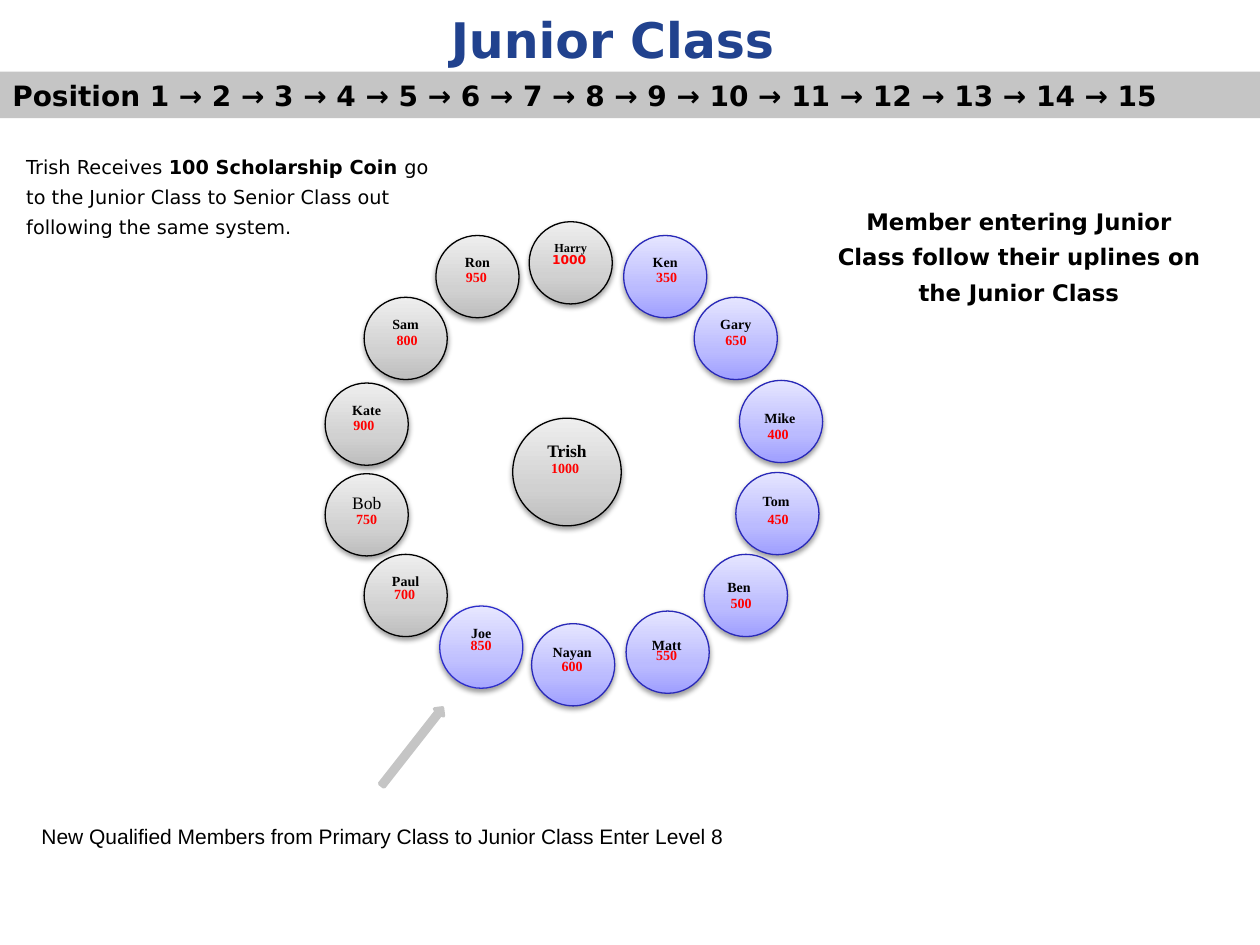
"""Build the Junior Class slide: a ring of members with their coin scores."""
from copy import deepcopy

from lxml.etree import SubElement
from pptx import Presentation
from pptx.dml.color import RGBColor
from pptx.enum.shapes import MSO_SHAPE
from pptx.enum.text import MSO_ANCHOR, PP_ALIGN
from pptx.oxml.ns import qn
from pptx.util import Pt

BLACK = RGBColor(0x00, 0x00, 0x00)
RED = RGBColor(0xFF, 0x00, 0x00)
NAVY = RGBColor(0x21, 0x42, 0x8E)
SILVER = RGBColor(0xC5, 0xC5, 0xC5)
GREY_STOPS = [RGBColor(0xBD, 0xBD, 0xBD), RGBColor(0xD1, 0xD1, 0xD1), RGBColor(0xEE, 0xEE, 0xEE)]
BLUE_STOPS = [RGBColor(0x9F, 0x9F, 0xFF), RGBColor(0xBB, 0xBB, 0xFF), RGBColor(0xE5, 0xE5, 0xFF)]
JOE_STOPS = [RGBColor(0xA7, 0xA7, 0xFF), RGBColor(0xC1, 0xC1, 0xFF), RGBColor(0xE7, 0xE7, 0xFF)]
GREY = (GREY_STOPS, BLACK)
BLUE = (BLUE_STOPS, RGBColor(0x29, 0x29, 0xB8))
JOE_BLUE = (JOE_STOPS, RGBColor(0x2E, 0x2E, 0xCB))
STOP_POSITIONS = (0, 0.35, 1)

SANS, SERIF = "DejaVu Sans", "Times New Roman"
CIRCLE_SIZE = (47.5, 47)
LEADER_SIZE = (62, 61.5)
LABEL_SIZE = (42, 17.25)

TITLE = "Junior Class"
POSITIONS = "Position " + " → ".join(str(number) for number in range(1, 16))
COIN_RUNS = [
    ("Trish Receives ", False),
    ("100 Scholarship Coin ", True),
    ("go to the Junior Class to Senior Class out following the same system.", False),
]
UPLINES = "Member entering Junior Class follow their uplines on the Junior Class"
ENTRY = "New Qualified Members from Primary Class to Junior Class Enter Level 8"

# name, circle corner, palette, score, score corner, name format
MEMBERS = [
    ("Harry", (302.4, 126.7), GREY, "1000", (304.2, 140.4), {"size": 7}),
    ("Ron", (249.1, 134.6), GREY, "950", (251.2, 149.8), {}),
    ("Ken", (356.4, 134.6), BLUE, "350", (360, 149.8), {}),
    ("Kate", (185.8, 218.9), GREY, "900", (187, 234.7), {}),
    ("Bob", (185.8, 270.7), GREY, "750", (188.5, 288), {"size": 10, "bold": False}),
    ("Paul", (208.1, 316.8), GREY, "700", (210.2, 331.2), {}),
    ("Gary", (396.7, 169.9), BLUE, "650", (399.6, 185.8), {}),
    ("Tom", (420.5, 270), BLUE, "450", (423.7, 288), {}),
    ("Ben", (402.5, 316.8), BLUE, "500", (402.5, 336.2), {}),
    ("Matt", (357.8, 349.2), BLUE, "550", (360, 365.8), {}),
    ("Joe", (251.3, 346.3), JOE_BLUE, "850", (253.9, 360), {}),
    ("Sam", (208.1, 169.9), GREY, "800", (211.7, 185.8), {}),
    ("Nayan", (303.8, 356.4), BLUE, "600", (306, 372.2), {}),
    ("Mike", (422.6, 217.4), BLUE, "400", (423.7, 239.8), {}),
    ("Trish", (293, 239), GREY, "1000", (302, 259.2), {"size": 10}),
]
NAME_CORNERS = {
    "Matt": (360, 360),
    "Nayan": (306, 364.3),
    "Ben": (401.3, 326.9),
    "Tom": (422.5, 277.9),
    "Mike": (424.7, 230.4),
}


def write(shape, text, font=SERIF, size=8, bold=True, color=BLACK, align=PP_ALIGN.CENTER,
          anchor=MSO_ANCHOR.TOP, wrap=False, spacing=None):
    """Write a string, or (string, bold) runs, into a shape."""
    frame = shape.text_frame
    frame.word_wrap = wrap
    frame.vertical_anchor = anchor
    para = frame.paragraphs[0]
    para.alignment = align
    if spacing:
        para.line_spacing = spacing
    for words, is_bold in [(text, bold)] if isinstance(text, str) else text:
        span = para.add_run()
        span.text = words
        span.font.name, span.font.size = font, Pt(size)
        span.font.bold, span.font.color.rgb = is_bold, color


def add_label(page, corner, extent, text, **style):
    """Add a text box."""
    box = page.shapes.add_textbox(*map(Pt, corner + extent))
    write(box, text, **style)


def add_plain(page, kind, corner, extent):
    """Add a flat silver shape."""
    shape = page.shapes.add_shape(kind, *map(Pt, corner + extent))
    shape.shadow.inherit = False
    shape.fill.solid()
    shape.fill.fore_color.rgb = SILVER
    shape.line.fill.background()
    return shape


def add_circle(page, corner, extent, palette):
    """Add a shaded circle with a soft shadow below it."""
    stops, outline = palette
    circle = page.shapes.add_shape(MSO_SHAPE.OVAL, *map(Pt, corner + extent))
    circle.fill.gradient()
    circle.fill.gradient_angle = 90
    properties = circle._element.spPr
    stop_list = properties.find(qn("a:gradFill")).find(qn("a:gsLst"))
    stop_list.append(deepcopy(stop_list[0]))
    for stop, color, position in zip(circle.fill.gradient_stops, stops, STOP_POSITIONS):
        stop.color.rgb = color
        stop.position = position
    circle.line.color.rgb = outline
    circle.line.width = Pt(0.75)
    circle.shadow.inherit = False
    shadow = SubElement(properties.find(qn("a:effectLst")), qn("a:outerShdw"),
                        blurRad=str(Pt(3.1)), dist=str(Pt(1.6)), dir="5400000", rotWithShape="0")
    tint = SubElement(shadow, qn("a:srgbClr"), val="000000")
    SubElement(tint, qn("a:alpha"), val="38000")
    return circle


def main():
    """Lay out the slide and save it."""
    deck = Presentation()
    deck.slide_width, deck.slide_height = Pt(720), Pt(540)
    page = deck.slides.add_slide(deck.slide_layouts[6])

    add_label(page, (0, 1.5), (700, 41), TITLE, font=SANS, size=28, color=NAVY,
              anchor=MSO_ANCHOR.MIDDLE, wrap=True)
    for name, corner, palette, *_, style in MEMBERS:
        extent = LEADER_SIZE if name == "Trish" else CIRCLE_SIZE
        circle = add_circle(page, corner, extent, palette)
        if name not in NAME_CORNERS:
            write(circle, name, **style)
    for name, corner in NAME_CORNERS.items():
        add_label(page, corner, LABEL_SIZE, name)
    for name, _, _, score, corner, _ in MEMBERS:
        style = {"font": SANS, "size": 7} if name == "Harry" else {}
        add_label(page, corner, LABEL_SIZE, score, color=RED, **style)

    add_label(page, (16.6, 467.3), (424, 21.6), ENTRY, font="Arial", size=12, bold=False,
              align=PP_ALIGN.LEFT, wrap=True)
    arrow = add_plain(page, MSO_SHAPE.RIGHT_ARROW, (207.4, 423.4), (56.2, 6.5))
    arrow.rotation = 308.1
    arrow.line.color.rgb = SILVER
    arrow.line.width = Pt(2)
    add_label(page, (468.7, 110.2), (226.8, 68.4), UPLINES, font=SANS, size=13,
              wrap=True, spacing=1.3)
    add_label(page, (7.9, 81.4), (248.4, 59), COIN_RUNS, font=SANS, size=11,
              align=PP_ALIGN.LEFT, wrap=True, spacing=1.3)
    bar = add_plain(page, MSO_SHAPE.RECTANGLE, (0, 41), (720, 26.6))
    write(bar, POSITIONS, font=SANS, size=16, align=PP_ALIGN.LEFT,
          anchor=MSO_ANCHOR.MIDDLE, wrap=True)
    deck.save("out.pptx")


if __name__ == "__main__":
    main()
